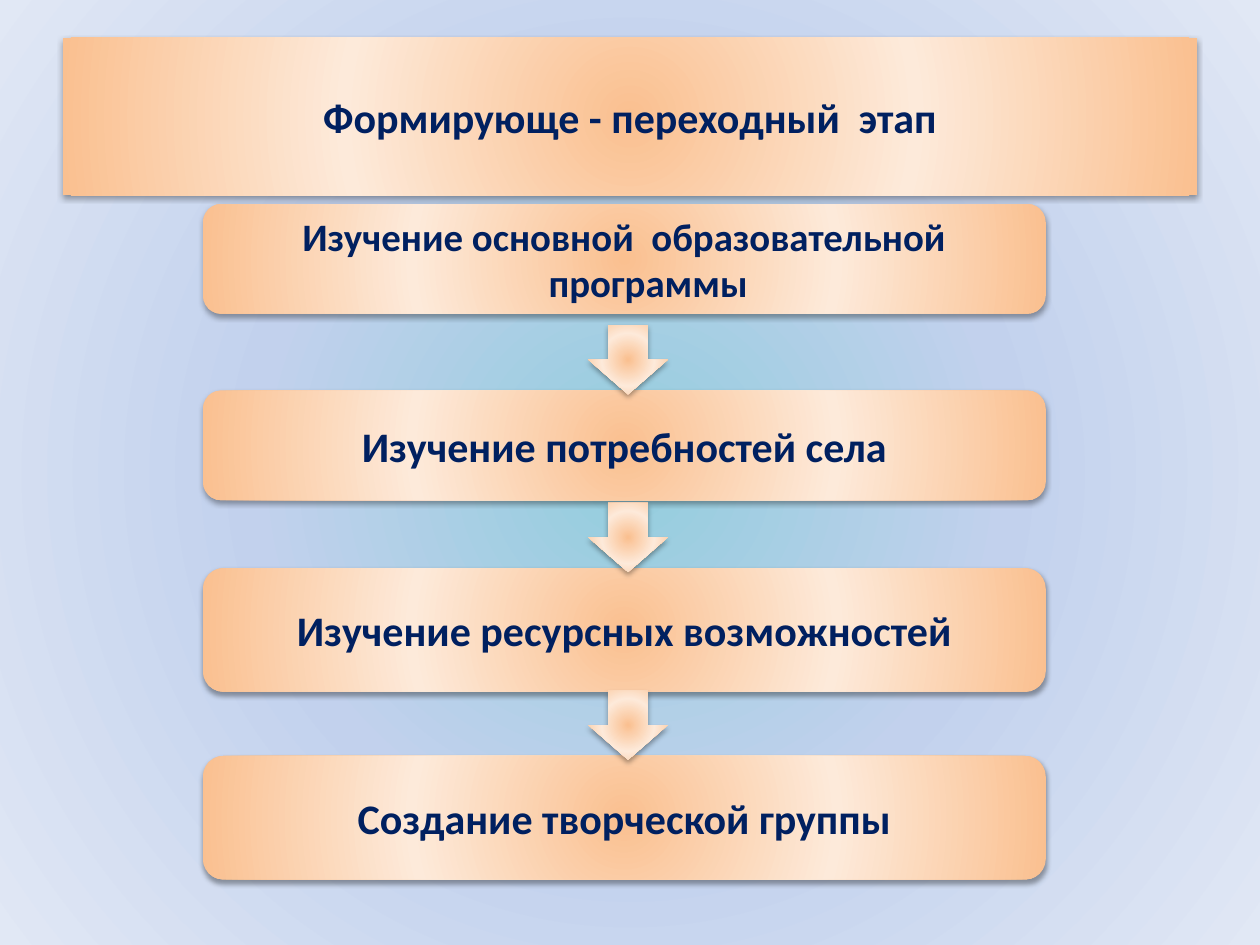
from lxml import etree
from pptx import Presentation
from pptx.dml.color import RGBColor
from pptx.enum.shapes import MSO_SHAPE
from pptx.enum.text import MSO_ANCHOR, MSO_AUTO_SIZE, PP_ALIGN
from pptx.oxml.ns import qn
from pptx.util import Inches, Pt

ROUNDED = MSO_SHAPE.ROUNDED_RECTANGLE
DOWN_ARROW = MSO_SHAPE.DOWN_ARROW
MIDDLE = MSO_ANCHOR.MIDDLE
CENTER = PP_ALIGN.CENTER

# Content: step text, top, height, text size
TITLE = "Формирующе - переходный  этап"
STEPS = [
    ("Изучение основной  образовательной программы", 1.62, 0.87, 22.2),
    ("Изучение потребностей села", 3.1, 0.87, 24),
    ("Изучение ресурсных возможностей", 4.51, 0.98, 24),
    ("Создание творческой группы", 6, 0.98, 24),
]

# Layout in inches
TITLE_AT = (0.5, 0.3, 9, 1.25)
STEP_LEFT, STEP_WIDTH = 1.61, 6.69
ARROW_LEFT, ARROW_WIDTH, ARROW_HEIGHT = 4.67, 0.63, 0.55
ARROW_RISE = 0.52  # from the arrow's top to the top of the next step
HANGING = 0.38

# Colours
NAVY = RGBColor(0x00, 0x20, 0x60)
BLACK = RGBColor(0x00, 0x00, 0x00)
PEACH = RGBColor(0xFA, 0xC0, 0x90)
CREAM = RGBColor(0xFD, 0xEA, 0xDA)
TEAL = RGBColor(0x93, 0xCD, 0xDD)
SKY = RGBColor(0xC2, 0xD1, 0xED)
PALE = RGBColor(0xE1, 0xE8, 0xF5)
PEACH_STOPS = [(0, PEACH), (50, CREAM), (100, PEACH)]
PAGE_STOPS = [(0, TEAL), (48, SKY), (100, PALE)]


def add(parent, tag, **attributes):
    values = {name: str(value) for name, value in attributes.items()}
    return etree.SubElement(parent, qn(tag), values)


def radial_fill(fill, properties, stops):
    """Give a fill a gradient that spreads in circles from the centre."""
    fill.solid()
    solid = properties.find(qn("a:solidFill"))
    gradient = etree.Element(qn("a:gradFill"), {"rotWithShape": "1"})
    stop_list = add(gradient, "a:gsLst")
    for position, color in stops:
        stop = add(stop_list, "a:gs", pos=position * 1000)
        add(stop, "a:srgbClr", val=color)
    circle = add(gradient, "a:path", path="circle")
    add(circle, "a:fillToRect", l=50000, t=50000, r=50000, b=50000)
    properties.replace(solid, gradient)


def style_shape(shape):
    properties = shape.element.spPr
    radial_fill(shape.fill, properties, PEACH_STOPS)
    shape.line.fill.background()
    shape.shadow.inherit = False
    shadow = add(properties.find(qn("a:effectLst")), "a:outerShdw",
                 blurRad=Pt(3.1), dist=Pt(1.8), dir=90 * 60000, rotWithShape=0)
    color = add(shadow, "a:srgbClr", val=BLACK)
    add(color, "a:alpha", val=35000)


def place(placeholder, at, preset, **adjustments):
    """Move a placeholder and give it a preset outline."""
    (placeholder.left, placeholder.top,
     placeholder.width, placeholder.height) = map(Inches, at)
    geometry = add(placeholder.element.spPr, "a:prstGeom", prst=preset)
    guides = add(geometry, "a:avLst")
    for name, value in adjustments.items():
        add(guides, "a:gd", name=name, fmla=f"val {value}")


def write(shape, text, size, hanging=0):
    frame = shape.text_frame
    frame.text = text
    frame.word_wrap = True
    frame.auto_size = MSO_AUTO_SIZE.NONE
    frame.vertical_anchor = MIDDLE
    para = frame.paragraphs[0]
    para.alignment = CENTER
    para.font.name = "Calibri"
    para.font.size = Pt(size)
    para.font.bold = True
    para.font.color.rgb = NAVY
    # Indent, space before and no bullet
    properties = para._p.get_or_add_pPr()
    properties.set("marL", str(Inches(hanging)))
    properties.set("indent", str(-Inches(hanging)))
    space = etree.Element(qn("a:spcBef"))
    add(space, "a:spcPct", val=20000)
    properties.insert(0, space)
    properties.insert(1, etree.Element(qn("a:buNone")))


def main():
    deck = Presentation()
    deck.slide_width, deck.slide_height = Inches(10), Inches(7.5)
    page = deck.slides.add_slide(deck.slide_layouts[1])

    # Background
    background = page.background.fill
    background.solid()
    radial_fill(background, page.element.find(".//" + qn("p:bgPr")), PAGE_STOPS)

    # Title
    title = page.shapes.title
    place(title, TITLE_AT, "downArrowCallout",
          adj1=25000, adj2=25700, adj3=26500, adj4=65700)
    style_shape(title)
    write(title, TITLE, 24)

    # Steps: the first is the body placeholder
    for number, (text, top, height, size) in enumerate(STEPS):
        at = (STEP_LEFT, top, STEP_WIDTH, height)
        if number == 0:
            box = page.placeholders[1]
            place(box, at, "roundRect")
        else:
            box = page.shapes.add_shape(ROUNDED, *map(Inches, at))
        style_shape(box)
        write(box, text, size, HANGING)

    # Arrows leading to each following step
    for _, top, _, _ in STEPS[1:]:
        at = (ARROW_LEFT, top - ARROW_RISE, ARROW_WIDTH, ARROW_HEIGHT)
        style_shape(page.shapes.add_shape(DOWN_ARROW, *map(Inches, at)))

    deck.save("out.pptx")


if __name__ == "__main__":
    main()
